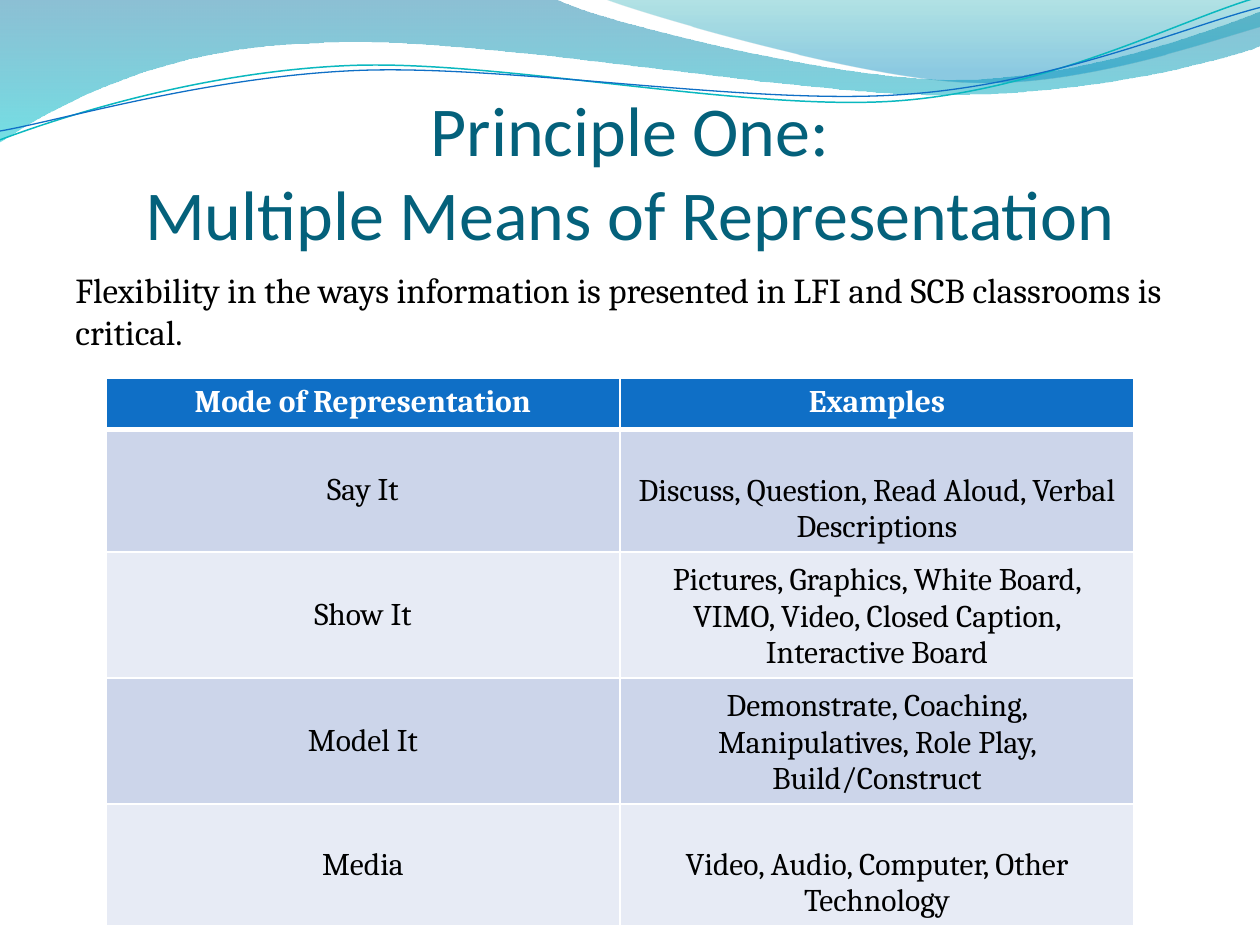
from math import cos, radians, sin

from lxml import etree
from pptx import Presentation
from pptx.dml.color import RGBColor
from pptx.enum.text import MSO_ANCHOR as ANCHOR, PP_ALIGN as ALIGN
from pptx.oxml.ns import qn
from pptx.util import Inches, Pt


def rgb(hex_color):
    return RGBColor.from_string(hex_color)


def turn(points, degrees, cx, cy):
    """Rotate points clockwise around a centre."""
    c, s = cos(radians(degrees)), sin(radians(degrees))
    return [(cx + (x - cx) * c - (y - cy) * s, cy + (x - cx) * s + (y - cy) * c)
            for x, y in points]


class Deck:
    heading, serif = "Calibri", "Cambria"
    teal, blue, white, black = "04617B", "0F6FC6", "FFFFFF", "000000"
    bands = ("CCD5EA", "E7EBF5")

    def __init__(self):
        self.prs = Presentation()
        self.prs.slide_width, self.prs.slide_height = Inches(10), Inches(7.5)
        self.s = self.prs.slides.add_slide(self.prs.slide_layouts[6])

    def outline(self, segments, close, tilt=0, centre=(0, 0)):
        """Draw segments: 2 numbers are a point, 6 numbers are a Bezier curve."""
        points = [seg[i:i + 2] for seg in segments for i in range(0, len(seg), 2)]
        start, *rest = [(Inches(x), Inches(y)) for x, y in turn(points, -tilt, *centre)]
        builder = self.s.shapes.build_freeform(*start)
        builder.add_line_segments(rest, close=close)
        sp = builder.convert_to_shape()
        sp.shadow.inherit = False
        sp.rotation = tilt
        # Join each three steps of a curve into one Bezier
        steps = iter(list(sp._element.spPr.iter(qn("a:lnTo"))))
        for seg in segments[1:]:
            first = next(steps)
            if len(seg) == 6:
                first.tag_name = None
                bezier = etree.Element(qn("a:cubicBezTo"))
                first.addprevious(bezier)
                for step in (first, next(steps), next(steps)):
                    bezier.append(step[0])
                    step.getparent().remove(step)
        return sp

    def wave(self, stops, *segments):
        sp = self.outline(segments, True)
        sp.line.fill.background()
        sp.fill.gradient()
        sp.fill.gradient_angle = 270  # top to bottom
        clrs = sp._element.spPr.iter(qn("a:gs"))
        for stop, gs, (pos, color, alpha) in zip(sp.fill.gradient_stops, clrs, stops):
            stop.position = pos
            stop.color.rgb = rgb(color)
            etree.SubElement(gs[0], qn("a:alpha"), val=str(alpha * 1000))

    def curve(self, color, width, centre, *segments):
        sp = self.outline(segments, False, -2.7, centre)
        sp.fill.background()
        sp.line.color.rgb = rgb(color)
        sp.line.width = Pt(width)

    def run(self, p, text, size, color, font=serif, bold=False):
        r = p.add_run()
        r.text = text
        r.font.name, r.font.size, r.font.bold = font, Pt(size), bold
        r.font.color.rgb = rgb(color)

    def box(self, left, top, width, height):
        tf = self.s.shapes.add_textbox(*map(Inches, (left, top, width, height))).text_frame
        tf.word_wrap = True
        return tf

    def title(self, lines, *place):
        tf = self.box(*place)
        tf.vertical_anchor = ANCHOR.BOTTOM
        tf.margin_left = tf.margin_right = tf.margin_bottom = 0
        p = tf.paragraphs[0]
        p.alignment = ALIGN.CENTER
        for i, line in enumerate(lines):
            if i:
                p.add_line_break()
            self.run(p, line, 40, self.teal, self.heading)

    def body(self, text, *place):
        p = self.box(*place).paragraphs[0]
        p.space_before = Pt(2)
        self.run(p, text, 20, self.black)

    def cell(self, cell, text, fill, color, anchor, bold=False):
        cell.fill.solid()
        cell.fill.fore_color.rgb = rgb(fill)
        cell.vertical_anchor = anchor
        p = cell.text_frame.paragraphs[0]
        p.alignment = ALIGN.CENTER
        self.run(p, text, 18, color, bold=bold)

    def borders(self, cell, **widths):
        tc_pr = cell._tc.get_or_add_tcPr()
        for i, side in enumerate("LRTB"):
            ln = etree.Element(qn("a:ln" + side), w=str(Pt(widths.get(side, 1))))
            fill = etree.SubElement(ln, qn("a:solidFill"))
            etree.SubElement(fill, qn("a:srgbClr"), val=self.white)
            tc_pr.insert(i, ln)

    def table(self, header, rows, left, top, col_width, head_height, row_height):
        frame = self.s.shapes.add_table(
            len(rows) + 1, len(header), Inches(left), Inches(top),
            Inches(col_width * len(header)), Inches(head_height + row_height * len(rows)))
        table = frame.table
        table.horz_banding = False
        for col in table.columns:
            col.width = Inches(col_width)
        for i, row in enumerate(table.rows):
            row.height = Inches(row_height if i else head_height)
        for c, text in enumerate(header):
            cell = table.cell(0, c)
            self.cell(cell, text, self.blue, self.white, ANCHOR.TOP, bold=True)
            self.borders(cell, B=3)
        for i, texts in enumerate(rows, 1):
            for c, text in enumerate(texts):
                cell = table.cell(i, c)
                anchor = ANCHOR.BOTTOM if c else ANCHOR.MIDDLE
                self.cell(cell, text, self.bands[(i - 1) % 2], self.black, anchor)
                self.borders(cell, T=3 if i == 1 else 1)


def main():
    deck = Deck()

    # Waves across the top
    deck.wave([(0, "0074A1", 45), (1, "00C6CF", 55)],
              (0, 0), (4.4, -0.01), (4.76, 0.17, 6.64, 0.63, 7.58, 0.63),
              (8.53, 0.63, 9.58, 0.26, 10, 0.09), (10.01, 0.36),
              (9.83, 0.44, 8.7, 0.76, 7.46, 0.75), (6.22, 0.75, 3.82, 0.28, 2.57, 0.34),
              (1.29, 0.36, 0.46, 0.83, -0.01, 1.13))
    deck.wave([(0, "00A1A9", 30), (0.8, "008BBF", 45)],
              (4.79, -0.01), (5.09, 0.11, 6.82, 0.62, 7.69, 0.65),
              (8.56, 0.69, 9.61, 0.32, 10, 0.21), (10, 0))

    # Thin tilted curves over the waves
    deck.curve("0AB8BF", 0.85, (4.99, 0.58),
               (0, 1.11), (0.48, 0.93, 1.58, 0.57, 2.77, 0.52),
               (3.95, 0.47, 5.93, 0.89, 7.13, 0.8), (8.33, 0.71, 9.38, 0.15, 9.98, -0.02))
    deck.curve("0F6FC6", 0.75, (5, 0.59),
               (0, 1.04), (0.47, 0.96, 1.64, 0.61, 2.83, 0.56),
               (4.03, 0.51, 5.97, 0.84, 7.17, 0.75), (8.36, 0.67, 9.41, 0.21, 10, 0.06))

    # Title and introduction
    deck.title(["Principle One:", "Multiple Means of Representation"], 0.5, 0.77, 9, 1.25)
    deck.body("Flexibility in the ways information is presented in LFI and SCB "
              "classrooms is critical.", 0.5, 2.08, 9, 4.8)

    # Modes and examples
    deck.table(
        ["Mode of Representation", "Examples"],
        [("Say It", "Discuss, Question, Read Aloud, Verbal Descriptions"),
         ("Show It", "Pictures, Graphics, White Board, VIMO, Video, Closed Caption, "
                     "Interactive Board"),
         ("Model It", "Demonstrate, Coaching, Manipulatives, Role Play, Build/Construct"),
         ("Media", "Video, Audio, Computer, Other Technology")],
        left=0.84, top=3, col_width=4.08, head_height=0.41, row_height=0.97)

    deck.prs.save("out.pptx")


if __name__ == "__main__":
    main()
